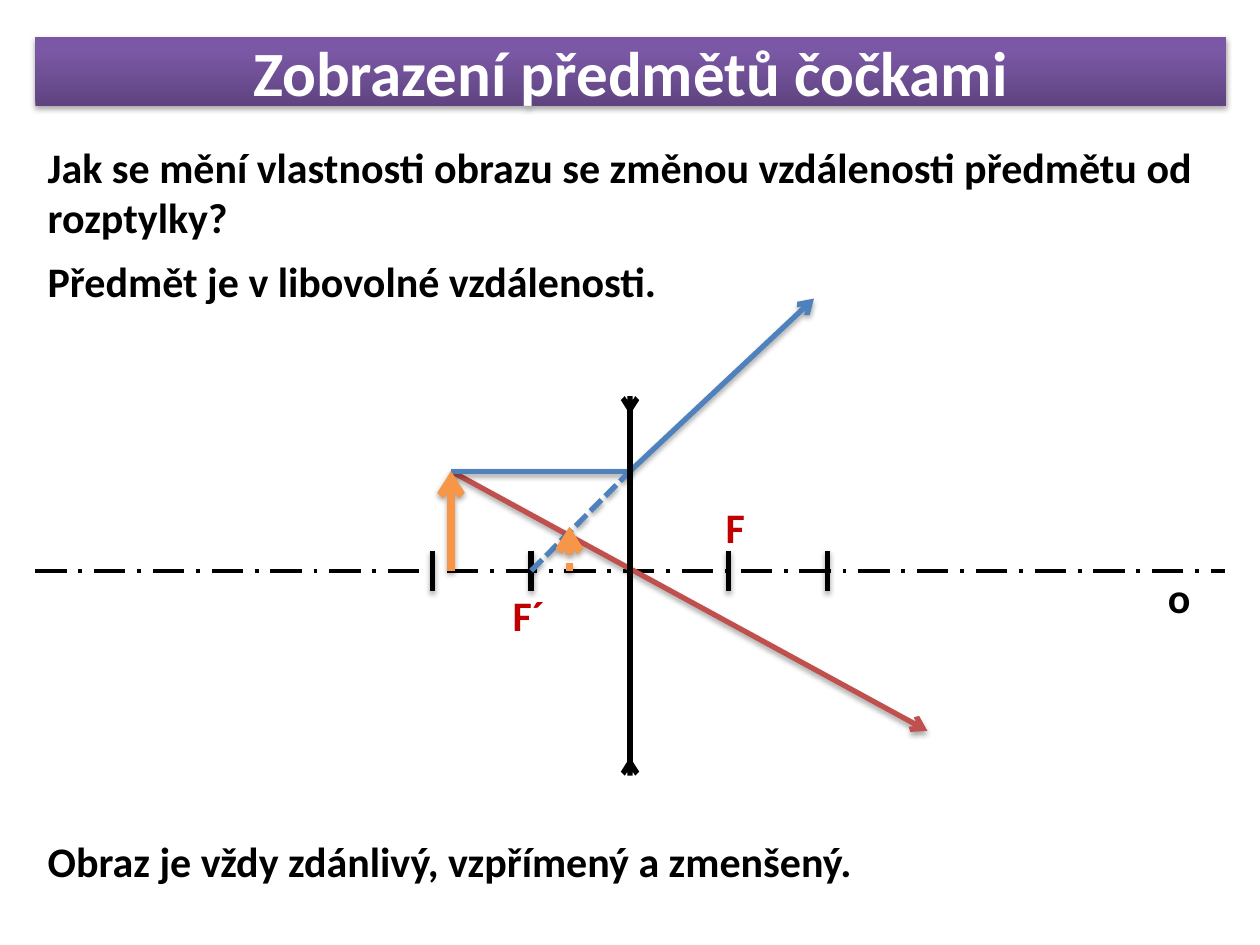
import pptx
import pptx.util
import pptx.dml.color
import pptx.enum.dml
import pptx.enum.shapes
import pptx.enum.text
import pptx.oxml
import pptx.oxml.ns

Inches, Pt = pptx.util.Inches, pptx.util.Pt
DASH = pptx.enum.dml.MSO_LINE
ALIGN = pptx.enum.text.PP_ALIGN
COLORS = {
    "black": "000000", "white": "FFFFFF", "focus": "C00000",
    "parallel_ray": "4F81BD", "central_ray": "C0504D", "object": "F79646",
    "bar_dark": "5F4480", "bar_light": "7B58A6",
}
LEFT, WIDTH = 0.28, 9.45
NS = pptx.oxml.ns.nsdecls("a")
SHADOW = (f'<a:effectLst {NS}><a:outerShdw blurRad="{Pt(3.1)}" dist="{Pt(1.8)}" '
          'dir="5400000" rotWithShape="0"><a:srgbClr val="000000">'
          '<a:alpha val="35000"/></a:srgbClr></a:outerShdw></a:effectLst>')


def rgb(name):
    return pptx.dml.color.RGBColor.from_string(COLORS[name])


def add_effect(sp, shadow):
    xml = SHADOW if shadow else f"<a:effectLst {NS}/>"
    sp._element.spPr.append(pptx.oxml.parse_xml(xml))


def set_text(sp, text, color="black", size=24, align=ALIGN.LEFT):
    tf = sp.text_frame
    tf.word_wrap = True
    p = tf.paragraphs[0]
    p.alignment = align
    r = p.add_run()
    r.text = text
    for name, value in {"name": "Calibri", "size": Pt(size), "bold": True}.items():
        setattr(r.font, name, value)
    r.font.color.rgb = rgb(color)


def add_label(s, box, text, color="black"):
    set_text(s.shapes.add_textbox(*map(Inches, box)), text, color)


def add_line(s, start, end, color="black", width=3, dash=None, arrow=False, shadow=True):
    sp = s.shapes.add_connector(pptx.enum.shapes.MSO_CONNECTOR.STRAIGHT,
                                *map(Inches, (*start, *end)))
    sp.line.color.rgb = rgb(color)
    sp.line.width = Pt(width)
    if dash:
        sp.line.dash_style = dash
    if arrow:
        sp.line._get_or_add_ln().append(
            pptx.oxml.parse_xml(f'<a:tailEnd {NS} type="arrow"/>'))
    add_effect(sp, shadow)


def add_title(s, box, text):
    sp = s.shapes.add_shape(pptx.enum.shapes.MSO_SHAPE.RECTANGLE, *map(Inches, box))
    sp.fill.gradient()
    sp.fill.gradient_angle = 90
    for stop, (position, color) in zip(sp.fill.gradient_stops,
                                       ((0, "bar_dark"), (0.8, "bar_light"))):
        stop.position = position
        stop.color.rgb = rgb(color)
    sp.line.fill.background()
    add_effect(sp, True)
    sp.text_frame.vertical_anchor = pptx.enum.text.MSO_ANCHOR.MIDDLE
    set_text(sp, text, "white", 36, ALIGN.CENTER)


def add_lens(s, x, top, bottom):
    """Diverging lens: a vertical line whose end arrows point inwards."""
    add_line(s, (x, bottom - 0.04), (x, top + 0.04), shadow=False)
    for end, inner in ((top, top + 0.08), (bottom, bottom - 0.08)):
        add_line(s, (x, end), (x, inner), arrow=True, shadow=False)


def add_ray_diagram(s, box):
    """Rays through a diverging lens in the middle of the box."""
    left, top, width, height = box
    right, bottom = left + width, top + height
    lens_x, axis_y = left + width / 2, top + 2.16
    focal, tick = 0.785, 0.16
    object_x, object_y = lens_x - 1.42, axis_y - 0.79
    image_x, image_y = lens_x - 0.48, axis_y - 0.35
    focus_x = lens_x - focal
    hit = (lens_x, object_y)

    add_line(s, (left, axis_y), (right, axis_y), width=2.25,
             dash=DASH.LONG_DASH_DOT, shadow=False)
    for n in (-2, -1, 1, 2):
        x = lens_x + n * focal
        add_line(s, (x, axis_y - tick), (x, axis_y + tick))

    add_line(s, hit, (lens_x + 1.46, top), "parallel_ray", arrow=True)
    add_line(s, (object_x, object_y), (lens_x + 2.36, axis_y + 1.27),
             "central_ray", arrow=True)
    add_line(s, (object_x, object_y), hit, "parallel_ray")
    add_line(s, (object_x, axis_y), (object_x, object_y), "object", 4.5, arrow=True)
    add_line(s, (focus_x, axis_y), hit, "parallel_ray", dash=DASH.SQUARE_DOT)
    add_line(s, (image_x, axis_y), (image_x, image_y), "object", 4.5,
             DASH.ROUND_DOT, arrow=True)
    add_lens(s, lens_x, top + 0.84, bottom)

    for x, y, text, color in ((lens_x - 1.03, axis_y + 0.1, "F´", "focus"),
                              (lens_x + 0.66, axis_y - 0.6, "F", "focus"),
                              (right - 0.55, axis_y - 0.04, "o", "black")):
        add_label(s, (x, y, 0.51, 0.5), text, color)


def main():
    prs = pptx.Presentation()
    prs.slide_width, prs.slide_height = Inches(10), Inches(7.5)
    s = prs.slides.add_slide(prs.slide_layouts[6])
    add_title(s, (LEFT, 0.29, WIDTH, 0.55), "Zobrazení předmětů čočkami")
    for top, height, text in (
            (1.07, 0.91, "Jak se mění vlastnosti obrazu se změnou vzdálenosti "
                         "předmětu od rozptylky?"),
            (1.98, 0.5, "Předmět je v libovolné vzdálenosti."),
            (6.58, 0.5, "Obraz je vždy zdánlivý, vzpřímený a zmenšený.")):
        add_label(s, (LEFT, top, WIDTH, height), text)
    add_ray_diagram(s, (LEFT, 2.37, 9.44, 3.72))
    prs.save("out.pptx")


if __name__ == "__main__":
    main()
